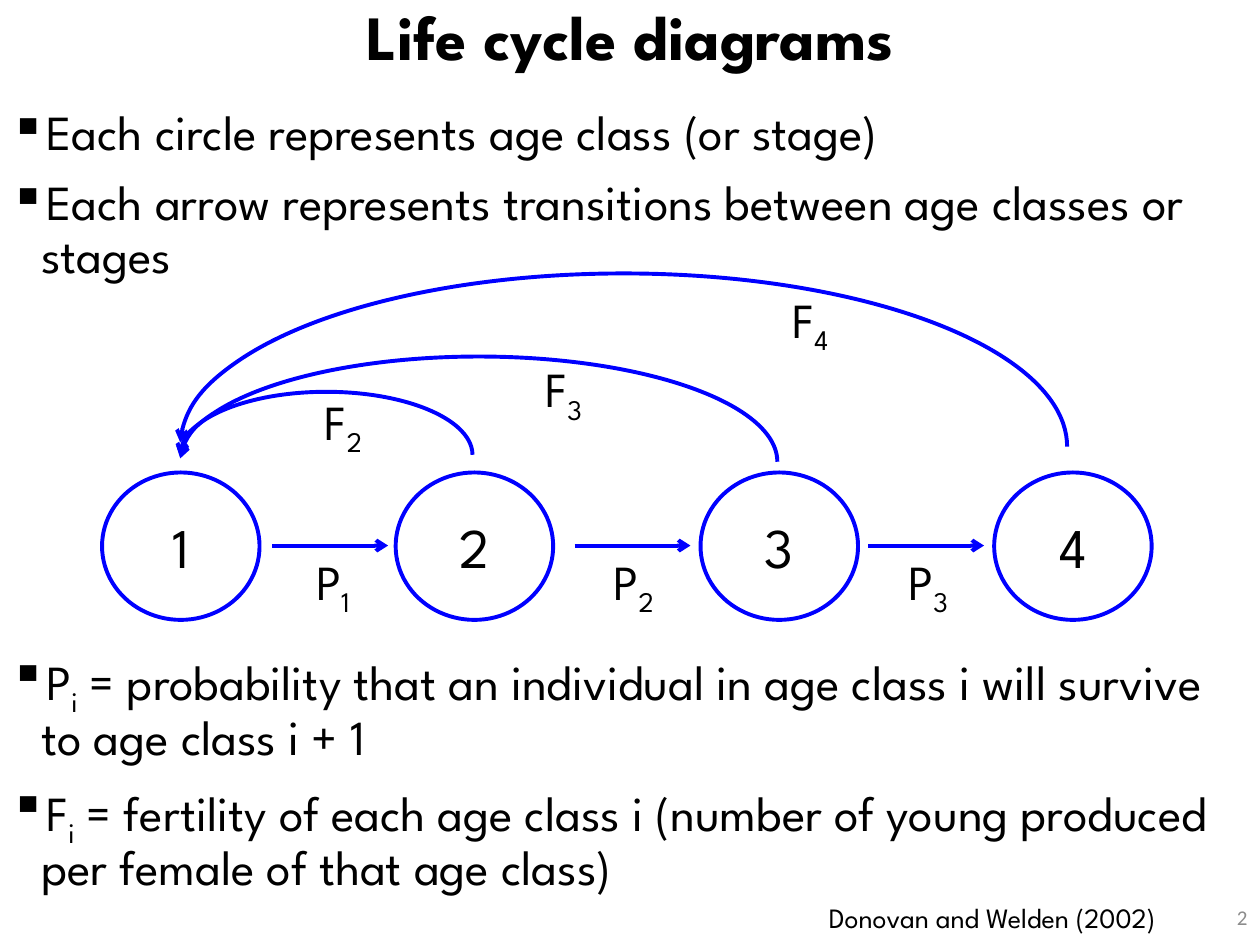
from lxml import etree
from pptx import Presentation, util as u
from pptx.dml.color import RGBColor
from pptx.enum import shapes, text
from pptx.oxml import ns

PX = 9144
FONT = "League Spartan"
BLACK, BLUE, GREY = "000000", "0000FF", "8C8C8C"


def write(para, content, size, color=BLACK, font=FONT):
    para.font.name = font
    para.font.size = u.Pt(size)
    para.font.color.rgb = RGBColor.from_string(color)
    for index, part in enumerate(content.split("_")):
        span = para.add_run()
        span.text = part
        if index == 1:
            span._r.get_or_add_rPr().set("baseline", "-25000")


def outline(shape, arrow_end=None):
    shape.line.color.rgb = RGBColor.from_string(BLUE)
    shape.line.width = u.Pt(2.25)
    if arrow_end:
        etree.SubElement(shape.line._get_or_add_ln(), ns.qn(arrow_end), type="arrow")


deck = Presentation()
deck.slide_width, deck.slide_height = 1000 * PX, 750 * PX
page = deck.slides.add_slide(deck.slide_layouts[5])

title = page.shapes.title
title.left, title.top, title.width, title.height = 0, 1 * PX, 1000 * PX, 62 * PX
title.text_frame.auto_size = text.MSO_AUTO_SIZE.NONE
heading = title.text_frame.paragraphs[0]
heading.alignment = text.PP_ALIGN.CENTER
heading.line_spacing = 0.9
heading.font.bold = True
write(heading, "Life cycle diagrams", 36)

bullet_blocks = [
    (81, 150, ["Each circle represents age class (or stage)",
               "Each arrow represents transitions between age classes or stages"]),
    (513, 210, ["P_i_ = probability that an individual in age class i will survive to age class i + 1",
                "F_i_ = fertility of each age class i (number of young produced per female of that age class)"]),
]
for top, height, lines in bullet_blocks:
    box = page.shapes.add_textbox(-2 * PX, top * PX, 1000 * PX, height * PX)
    box.text_frame.word_wrap = True
    for index, line in enumerate(lines):
        para = box.text_frame.add_paragraph() if index else box.text_frame.paragraphs[0]
        para.line_spacing = 0.9
        para.space_before = u.Pt(10)
        write(para, line, 28)
        props = para._p.get_or_add_pPr()
        props.set("marL", str(25 * PX))
        props.set("indent", str(-25 * PX))
        bullet = etree.Element(ns.qn("a:buChar"), char="▪")
        props.find(ns.qn("a:defRPr")).addprevious(bullet)

for number, left in enumerate([81, 314, 556, 789], 1):
    circle = page.shapes.add_shape(
        shapes.MSO_SHAPE.OVAL, left * PX, 375 * PX, 125 * PX, 117 * PX)
    circle.shadow.inherit = False
    circle.fill.background()
    outline(circle)
    circle.text_frame.vertical_anchor = text.MSO_ANCHOR.MIDDLE
    para = circle.text_frame.paragraphs[0]
    para.alignment = text.PP_ALIGN.CENTER
    write(para, str(number), 32)

for left in [216, 456, 689]:
    arrow = page.shapes.add_connector(
        shapes.MSO_CONNECTOR.STRAIGHT, left * PX, 433 * PX, (left + 92) * PX, 433 * PX)
    outline(arrow, "a:tailEnd")
    etree.SubElement(arrow._element.spPr, ns.qn("a:effectLst"))

for top, width, height, start in [(311, 232, 100, 107.74), (283, 474, 167, 108.38), (217, 704, 275, 108.34)]:
    arc = page.shapes.add_shape(
        shapes.MSO_SHAPE.ARC, 143 * PX, top * PX, width * PX, height * PX)
    arc.adjustments[0], arc.adjustments[1] = start, 0
    arc.shadow.inherit = False
    arc.fill.background()
    outline(arc, "a:headEnd")

labels = [
    ("P_1", 241, 433, 62, 57, 28),
    ("P_2", 477, 433, 62, 57, 28),
    ("P_3", 711, 433, 62, 57, 28),
    ("F_4", 619, 225, 59, 57, 28),
    ("F_3", 423, 280, 59, 57, 28),
    ("F_2", 248, 306, 59, 57, 28),
    ("Donovan and Welden (2002)", 648, 710, 323, 37, 16),
]
for label, left, top, width, height, size in labels:
    box = page.shapes.add_textbox(left * PX, top * PX, width * PX, height * PX)
    box.text_frame.word_wrap = False
    write(box.text_frame.paragraphs[0], label, size)

page_number = page.shapes.add_textbox(775 * PX, 708 * PX, 225 * PX, 40 * PX)
page_number.text_frame.word_wrap = True
page_number.text_frame.vertical_anchor = text.MSO_ANCHOR.MIDDLE
para = page_number.text_frame.paragraphs[0]
para.alignment = text.PP_ALIGN.RIGHT
write(para, "2", 12, GREY, "Calibri")

deck.save("out.pptx")
